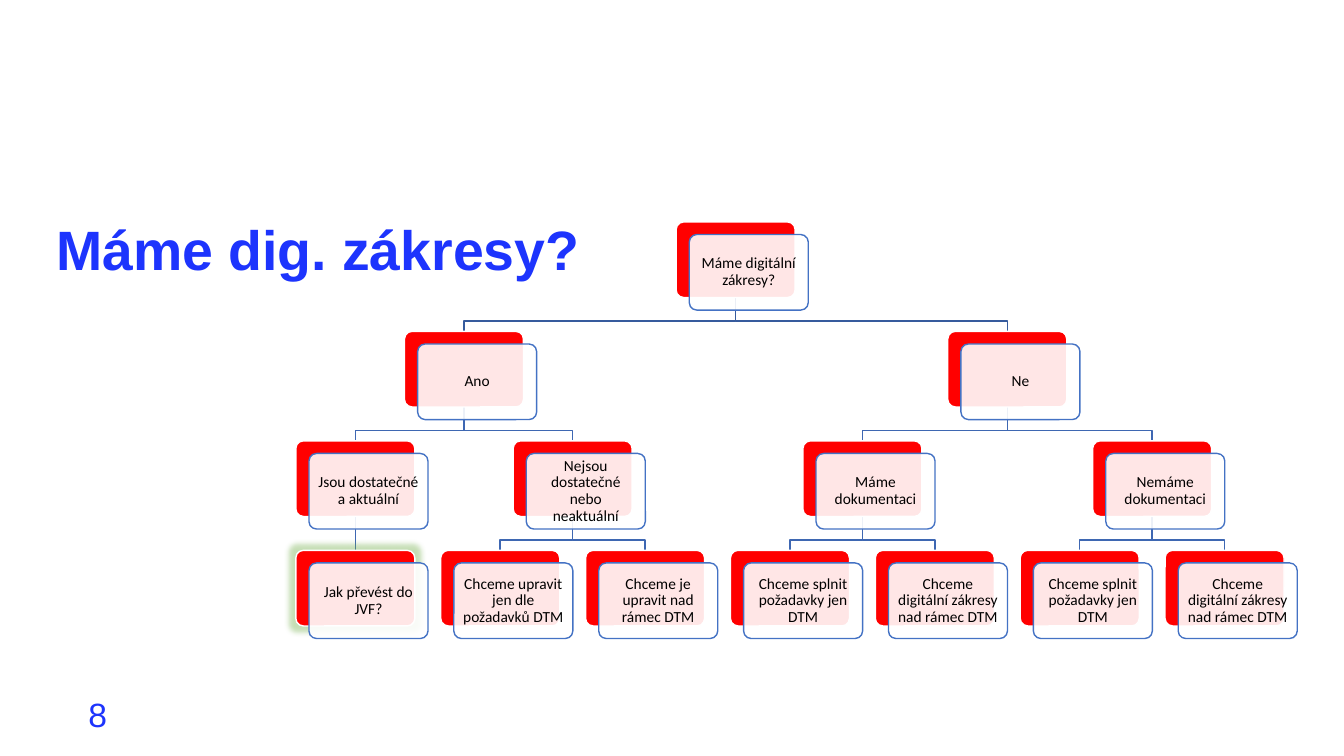
from dataclasses import dataclass, field

from lxml import etree
from pptx import Presentation
from pptx.dml.color import RGBColor
from pptx.enum.shapes import MSO_CONNECTOR, MSO_SHAPE
from pptx.enum.text import MSO_ANCHOR, PP_ALIGN
from pptx.oxml.ns import qn
from pptx.util import Pt

MIDDLE = MSO_ANCHOR.MIDDLE
CENTER = PP_ALIGN.CENTER
ROUNDED = MSO_SHAPE.ROUNDED_RECTANGLE
STRAIGHT = MSO_CONNECTOR.STRAIGHT
BOTTOM_SIDE, TOP_SIDE = 2, 0

BLUE, RED, WHITE, BLACK = "1D34FD", "FF0000", "FFFFFF", "000000"
CARD_LINE, TOP_LINK, LINK, GLOW = "4472C4", "365B9D", "3E67B2", "70AD47"

# Tree measures in points
CARD_W, CARD_H = 85, 54
FRONT_DX, FRONT_DY = 9.4, 9
LEVEL_STEP = 78.2
BEND = 16.8


@dataclass
class Question:
    text: str
    answers: list = field(default_factory=list)
    glow: bool = False
    level: int = 0
    x: float = 0
    y: float = 0
    card: object = None


def decision_tree():
    return Question("Máme digitální zákresy?", [
        Question("Ano", [
            Question("Jsou dostatečné a aktuální", [
                Question("Jak převést do JVF?", glow=True)]),
            Question("Nejsou dostatečné nebo neaktuální", [
                Question("Chceme upravit jen dle požadavků DTM"),
                Question("Chceme je upravit nad rámec DTM")])]),
        Question("Ne", [
            Question(name, [
                Question("Chceme splnit požadavky jen DTM"),
                Question("Chceme digitální zákresy nad rámec DTM")])
            for name in ("Máme dokumentaci", "Nemáme dokumentaci")])])


def color(hex_string):
    return RGBColor.from_string(hex_string)


def add_child(parent, tag, **attributes):
    return etree.SubElement(parent, qn(tag), attributes)


def set_alpha(color_element, percent):
    add_child(color_element, "a:alpha", val=str(percent * 1000))


def walk(question):
    yield question
    for answer in question.answers:
        yield from walk(answer)


def arrange(question, level, left, top, step, leaves):
    """Leaves stand side by side; every parent is centred over its answers."""
    question.level = level
    question.y = top + level * LEVEL_STEP
    for answer in question.answers:
        arrange(answer, level + 1, left, top, step, leaves)
    if question.answers:
        question.x = (question.answers[0].x + question.answers[-1].x) / 2
    else:
        question.x = left + CARD_W / 2 + len(leaves) * step
        leaves.append(question)


def add_link(slide, parent, child):
    start = parent.y + CARD_H
    if len(parent.answers) == 1:
        link = slide.shapes.add_connector(
            STRAIGHT, Pt(parent.x), Pt(start), Pt(child.x), Pt(child.y))
        add_child(link._element.spPr, "a:effectLst")
    else:
        outline = slide.shapes.build_freeform(Pt(parent.x), Pt(start))
        outline.add_line_segments(
            [(Pt(parent.x), Pt(start + BEND)),
             (Pt(child.x), Pt(start + BEND)),
             (Pt(child.x), Pt(child.y))], close=False)
        link = outline.convert_to_shape()
        link.fill.background()
        link.shadow.inherit = False
    link.line.color.rgb = color(LINK if parent.level else TOP_LINK)
    link.line.width = Pt(1)
    return link


def add_plate(slide, left, top, fill, line):
    plate = slide.shapes.add_shape(
        ROUNDED, Pt(left), Pt(top), Pt(CARD_W), Pt(CARD_H))
    plate.adjustments[0] = 0.1
    plate.shadow.inherit = False
    plate.fill.solid()
    plate.fill.fore_color.rgb = color(fill)
    plate.line.color.rgb = color(line)
    plate.line.width = Pt(1)
    return plate


def add_card(slide, question):
    left = question.x - CARD_W / 2
    question.card = add_plate(slide, left, question.y, RED, WHITE)
    if question.glow:
        effects = question.card._element.spPr.find(qn("a:effectLst"))
        glow = add_child(effects, "a:glow", rad=str(Pt(8)))
        set_alpha(add_child(glow, "a:srgbClr", val=GLOW), 40)

    # Translucent front plate with the wording
    front = add_plate(slide, left + FRONT_DX, question.y + FRONT_DY,
                      WHITE, CARD_LINE)
    set_alpha(front._element.spPr.find(qn("a:solidFill"))[0], 90)
    frame = front.text_frame
    frame.word_wrap = True
    frame.vertical_anchor = MIDDLE
    frame.margin_left = frame.margin_right = Pt(5)
    frame.margin_top = frame.margin_bottom = Pt(5)
    write(frame.paragraphs[0], question.text, "Calibri", 11, BLACK)
    frame.paragraphs[0].alignment = CENTER


def write(paragraph, text, font_name, size, hex_string, bold=False):
    paragraph.text = text
    paragraph.line_spacing = 0.9
    paragraph.font.name = font_name
    paragraph.font.size = Pt(size)
    paragraph.font.bold = bold
    paragraph.font.color.rgb = color(hex_string)


def add_label(slide, left, top, width, height, text, size, bold=False):
    label = slide.shapes.add_textbox(Pt(left), Pt(top), Pt(width), Pt(height))
    label.text_frame.word_wrap = True
    label.text_frame.vertical_anchor = MIDDLE
    write(label.text_frame.paragraphs[0], text, "Arial", size, BLUE, bold)


def add_tree(slide, root, left, top, width):
    leaf_count = sum(not question.answers for question in walk(root))
    step = (width - CARD_W) / (leaf_count - 1)
    arrange(root, 0, left, top, step, [])

    # Links lie behind the cards
    links = [(add_link(slide, parent, child), parent, child)
             for parent in walk(root) for child in parent.answers]
    for question in walk(root):
        add_card(slide, question)
    for link, parent, child in links:
        if len(parent.answers) == 1:
            link.begin_connect(parent.card, BOTTOM_SIDE)
            link.end_connect(child.card, TOP_SIDE)


def main():
    deck = Presentation()
    deck.slide_width, deck.slide_height = Pt(960), Pt(540)
    slide = deck.slides.add_slide(deck.slide_layouts[6])
    add_label(slide, 56, 497.5, 216, 29, "8", 24)
    add_label(slide, 33, 154, 861, 52.5, "Máme dig. zákresy?", 39.6, bold=True)
    add_tree(slide, decision_tree(), left=211.3, top=158.5, width=705.9)
    deck.save("out.pptx")


if __name__ == "__main__":
    main()
